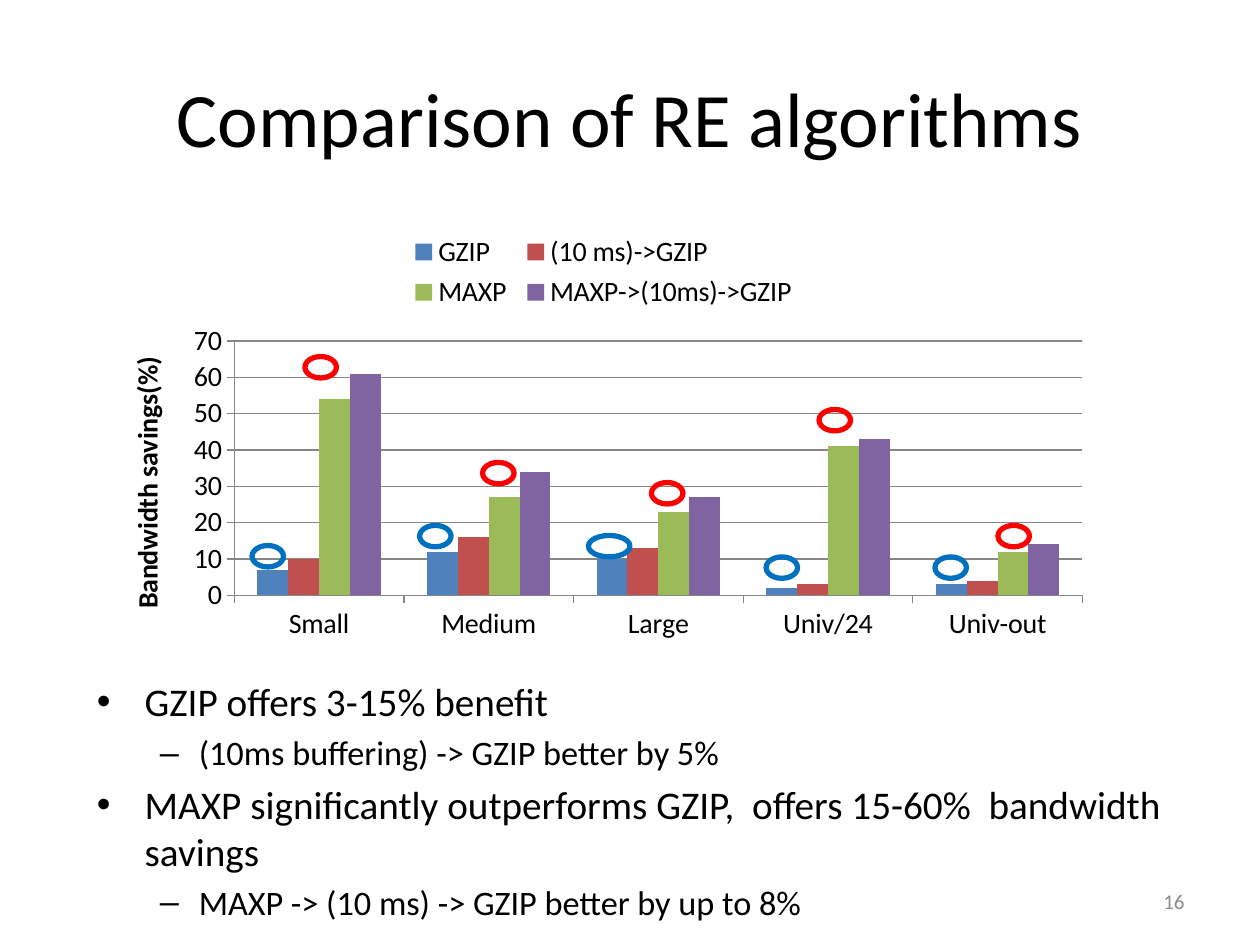
from dataclasses import dataclass

from lxml.etree import SubElement
from pptx import Presentation
from pptx.chart.data import CategoryChartData
from pptx.dml.color import RGBColor
from pptx.enum.chart import XL_CHART_TYPE, XL_LEGEND_POSITION, XL_TICK_MARK
from pptx.enum.shapes import MSO_SHAPE
from pptx.enum.text import MSO_ANCHOR, PP_ALIGN
from pptx.oxml import parse_xml
from pptx.oxml.ns import nsdecls, qn
from pptx.util import Inches, Pt


@dataclass(frozen=True)
class Theme:
    font: str = "Calibri"
    ink: RGBColor = RGBColor(0x00, 0x00, 0x00)
    muted: RGBColor = RGBColor(0x8C, 0x8C, 0x8C)
    grid: RGBColor = RGBColor(0x86, 0x86, 0x86)
    red: RGBColor = RGBColor(0xFF, 0x00, 0x00)
    blue: RGBColor = RGBColor(0x00, 0x70, 0xC0)
    title_size: float = 44
    bullet_sizes: tuple = (22.4, 19.6)
    chart_size: float = 16
    number_size: float = 12


THEME = Theme()
CATEGORIES = ["Small", "Medium", "Large", "Univ/24", "Univ-out"]
SAVINGS = [
    ("GZIP", [7, 12, 10, 2, 3], "4F81BD"),
    ("(10 ms)->GZIP", [10, 16, 13, 3, 4], "C0504D"),
    ("MAXP", [54, 27, 23, 41, 12], "9BBB59"),
    ("MAXP->(10ms)->GZIP", [61, 34, 27, 43, 14], "8064A2"),
]
FINDINGS = [
    (0, "GZIP offers 3-15% benefit"),
    (1, "(10ms buffering) -> GZIP better by 5%"),
    (0, "MAXP significantly outperforms GZIP,  offers 15-60%  bandwidth savings"),
    (1, "MAXP -> (10 ms) -> GZIP better by up to 8%"),
]
BULLETS = [("•", 0.38, 0.38), ("–", 0.81, 0.31)]
GZIP_RINGS = [(2, 4.33, 0.25), (3.33, 4.17, 0.25), (4.67, 4.25, 0.33),
              (6.08, 4.42, 0.25), (7.42, 4.42, 0.25)]
MAXP_RINGS = [(2.42, 2.83, 0.25), (3.83, 3.67, 0.25), (5.17, 3.83, 0.25),
              (6.5, 3.25, 0.25), (7.92, 4.17, 0.25)]


def inches(box):
    return [Inches(length) for length in box]


def style_font(font, size, color=THEME.ink):
    font.name = THEME.font
    font.size = Pt(size)
    font.color.rgb = color


def add_frame(slide, box, anchor):
    frame = slide.shapes.add_textbox(*inches(box)).text_frame
    frame.word_wrap = True
    frame.vertical_anchor = anchor
    return frame


def add_line(slide, box, text, size, color, align):
    paragraph = add_frame(slide, box, MSO_ANCHOR.MIDDLE).paragraphs[0]
    paragraph.alignment = align
    run = paragraph.add_run()
    run.text = text
    style_font(run.font, size, color)


def add_findings(slide, box):
    frame = add_frame(slide, box, MSO_ANCHOR.TOP)
    for index, (level, text) in enumerate(FINDINGS):
        paragraph = frame.add_paragraph() if index else frame.paragraphs[0]
        paragraph.level = level
        size = THEME.bullet_sizes[level]
        paragraph.space_before = Pt(round(size * 0.2, 1))
        mark, margin, hang = BULLETS[level]
        properties = paragraph._p.get_or_add_pPr()
        properties.set("marL", str(Inches(margin)))
        properties.set("indent", str(-Inches(hang)))
        SubElement(properties, qn("a:buFont")).set("typeface", "Arial")
        SubElement(properties, qn("a:buChar")).set("char", mark)
        run = paragraph.add_run()
        run.text = text
        style_font(run.font, size)


def set_layout(parent, position, target, x, y, w, h):
    for layout in parent.findall(qn("c:layout")):
        parent.remove(layout)
    inner = '<c:layoutTarget val="inner"/>' if target else ""
    parent.insert(position, parse_xml(
        f'<c:layout {nsdecls("c")}><c:manualLayout>{inner}'
        '<c:xMode val="edge"/><c:yMode val="edge"/>'
        f'<c:x val="{x}"/><c:y val="{y}"/><c:w val="{w}"/><c:h val="{h}"/>'
        '</c:manualLayout></c:layout>'))


def add_savings_chart(slide, box):
    data = CategoryChartData()
    data.categories = CATEGORIES
    for name, values, _ in SAVINGS:
        data.add_series(name, values)
    chart = slide.shapes.add_chart(
        XL_CHART_TYPE.COLUMN_CLUSTERED, *inches(box), data).chart
    style_font(chart.font, THEME.chart_size)
    chart.has_title = False

    plot = chart.plots[0]
    plot.vary_by_categories = False
    plot.gap_width = 150
    plot.overlap = 0
    for series, (_, _, color) in zip(plot.series, SAVINGS):
        series.format.fill.solid()
        series.format.fill.fore_color.rgb = RGBColor.from_string(color)

    savings_axis = chart.value_axis
    for axis in (chart.category_axis, savings_axis):
        axis.major_tick_mark = XL_TICK_MARK.OUTSIDE
        axis.minor_tick_mark = XL_TICK_MARK.NONE
        axis.format.line.color.rgb = THEME.grid
    savings_axis.minimum_scale = 0
    savings_axis.maximum_scale = 70
    savings_axis.major_unit = 10
    savings_axis.has_major_gridlines = True
    savings_axis.major_gridlines.format.line.color.rgb = THEME.grid
    run = savings_axis.axis_title.text_frame.paragraphs[0].add_run()
    run.text = "Bandwidth savings(%)"
    style_font(run.font, THEME.chart_size)
    run.font.bold = True

    chart.has_legend = True
    chart.legend.position = XL_LEGEND_POSITION.TOP
    chart.legend.include_in_layout = False
    style_font(chart.legend.font, THEME.chart_size)
    plot_area = chart.element.find(".//" + qn("c:plotArea"))
    legend = chart.element.find(".//" + qn("c:legend"))
    set_layout(plot_area, 0, True, 0.13, 0.28, 0.85, 0.59)
    set_layout(legend, 1, False, 0.3, 0.02, 0.4, 0.2)


def add_rings(slide, rings, color):
    for left, top, width in rings:
        ring = slide.shapes.add_shape(
            MSO_SHAPE.OVAL, *inches((left, top, width, 0.17)))
        ring.shadow.inherit = False
        ring.fill.background()
        ring.line.color.rgb = color
        ring.line.width = Pt(3)


def main():
    deck = Presentation()
    deck.slide_width, deck.slide_height = Inches(10), Inches(7.5)
    slide = deck.slides.add_slide(deck.slide_layouts[6])
    add_savings_chart(slide, (0.83, 1.75, 7.92, 3.42))
    add_line(slide, (0.5, 0.3, 9, 1.25), "Comparison of RE algorithms",
             THEME.title_size, THEME.ink, PP_ALIGN.CENTER)
    add_findings(slide, (0.67, 5.33, 9, 1.83))
    add_line(slide, (7.17, 6.95, 2.33, 0.4), "16",
             THEME.number_size, THEME.muted, PP_ALIGN.RIGHT)
    add_rings(slide, GZIP_RINGS, THEME.blue)
    add_rings(slide, MAXP_RINGS, THEME.red)
    deck.save("out.pptx")


if __name__ == "__main__":
    main()
